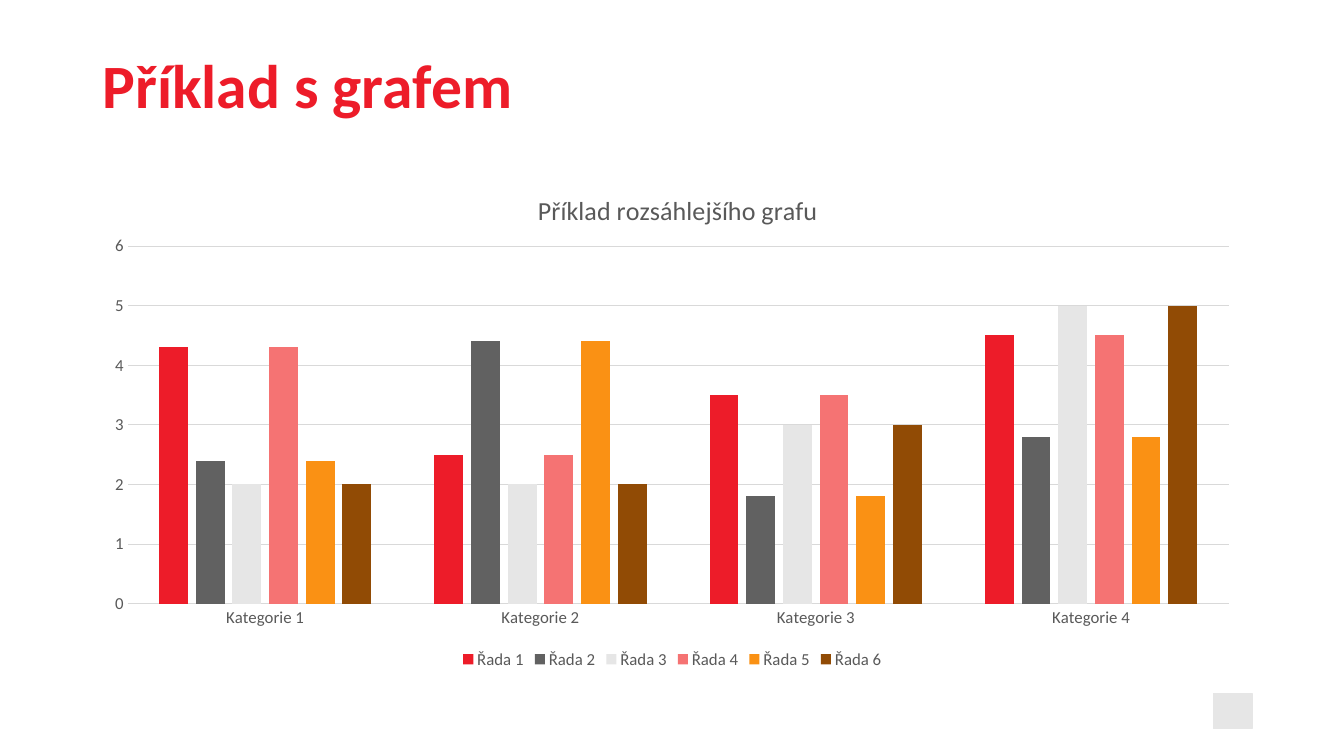
from lxml import etree
from pptx import Presentation
from pptx.chart.data import CategoryChartData
from pptx.dml.color import RGBColor
from pptx.enum.chart import XL_CHART_TYPE as ChartType, XL_LEGEND_POSITION as LegendPosition
from pptx.enum.chart import XL_TICK_MARK as TickMark
from pptx.enum.shapes import MSO_SHAPE as Shape
from pptx.enum.text import MSO_ANCHOR as Anchor
from pptx.oxml.ns import qn
from pptx.util import Pt

RED = RGBColor(0xED, 0x1C, 0x29)
DARK_GREY = RGBColor(0x61, 0x61, 0x61)
LIGHT_GREY = RGBColor(0xE6, 0xE6, 0xE6)
PINK = RGBColor(0xF5, 0x73, 0x73)
ORANGE = RGBColor(0xFA, 0x91, 0x14)
BROWN = RGBColor(0x91, 0x4B, 0x05)
TEXT_GREY = RGBColor(0x59, 0x59, 0x59)
GRID_GREY = RGBColor(0xD9, 0xD9, 0xD9)
FONT = "Calibri"

HEADING = "Příklad s grafem"
CHART_TITLE = "Příklad rozsáhlejšího grafu"
CATEGORIES = ["Kategorie 1", "Kategorie 2", "Kategorie 3", "Kategorie 4"]
SERIES = [
    ("Řada 1", (4.3, 2.5, 3.5, 4.5), RED),
    ("Řada 2", (2.4, 4.4, 1.8, 2.8), DARK_GREY),
    ("Řada 3", (2, 2, 3, 5), LIGHT_GREY),
    ("Řada 4", (4.3, 2.5, 3.5, 4.5), PINK),
    ("Řada 5", (2.4, 4.4, 1.8, 2.8), ORANGE),
    ("Řada 6", (2, 2, 3, 5), BROWN),
]
HEADING_FONT = {"name": FONT, "size": Pt(44), "bold": True}
TITLE_FONT = {"name": FONT, "size": Pt(18.6), "bold": False}
LABEL_FONT = {"name": FONT, "size": Pt(12), "bold": False}

# Left, top, width, height in points
HEADING_BOX = (66.24, 26.64, 828, 72.72)
CHART_BOX = (66.24, 115.92, 828, 365.04)
NUMBER_BOX = (866.88, 495.36, 27.36, 25.2)
# Fractions of the chart area
TITLE_LAYOUT = {"xMode": "edge", "yMode": "edge", "x": 0.38, "y": 0.05}
PLOT_LAYOUT = {"layoutTarget": "inner", "xMode": "edge", "yMode": "edge",
               "x": 0.03, "y": 0.164, "w": 0.95, "h": 0.7}


def points(box):
    return [Pt(length) for length in box]


def set_font(font, formats, color):
    for attribute, value in formats.items():
        setattr(font, attribute, value)
    font.color.rgb = color


def set_line(line, color, width):
    line.color.rgb = color
    line.width = Pt(width)


def set_layout(parent, layout, index):
    """Place a chart part by hand, with its layout element at the given index."""
    for previous in parent.findall(qn("c:layout")):
        parent.remove(previous)
    element = etree.Element(qn("c:layout"))
    manual = etree.SubElement(element, qn("c:manualLayout"))
    for tag, value in layout.items():
        etree.SubElement(manual, qn(f"c:{tag}")).set("val", str(value))
    parent.insert(index, element)


def add_heading(slide):
    frame = slide.shapes.add_textbox(*points(HEADING_BOX)).text_frame
    frame.word_wrap = True
    frame.vertical_anchor = Anchor.MIDDLE
    paragraph = frame.paragraphs[0]
    paragraph.text = HEADING
    paragraph.line_spacing = 0.9
    set_font(paragraph.runs[0].font, HEADING_FONT, RED)


def add_number_square(slide):
    square = slide.shapes.add_shape(Shape.RECTANGLE, *points(NUMBER_BOX))
    square.shadow.inherit = False
    square.fill.solid()
    square.fill.fore_color.rgb = LIGHT_GREY
    set_line(square.line, LIGHT_GREY, 1)


def add_column_chart(slide):
    data = CategoryChartData()
    data.categories = CATEGORIES
    for name, values, _ in SERIES:
        data.add_series(name, values)
    chart = slide.shapes.add_chart(
        ChartType.COLUMN_CLUSTERED, *points(CHART_BOX), data).chart
    set_font(chart.font, LABEL_FONT, TEXT_GREY)

    title = chart.chart_title
    title.text_frame.text = CHART_TITLE
    set_font(title.text_frame.paragraphs[0].runs[0].font, TITLE_FONT, TEXT_GREY)
    title.include_in_layout = False
    title_element = chart.element.find(".//" + qn("c:title"))
    set_layout(title_element, TITLE_LAYOUT, 1)
    set_layout(chart.element.find(".//" + qn("c:plotArea")), PLOT_LAYOUT, 0)

    chart.has_legend = True
    chart.legend.position = LegendPosition.BOTTOM
    chart.legend.include_in_layout = False
    set_font(chart.legend.font, LABEL_FONT, TEXT_GREY)

    plot = chart.plots[0]
    plot.gap_width = 219
    plot.overlap = -27
    plot.vary_by_categories = False
    for series, (_, _, color) in zip(plot.series, SERIES):
        series.format.fill.solid()
        series.format.fill.fore_color.rgb = color

    for axis in (chart.category_axis, chart.value_axis):
        axis.major_tick_mark = axis.minor_tick_mark = TickMark.NONE
        set_font(axis.tick_labels.font, LABEL_FONT, TEXT_GREY)
    set_line(chart.category_axis.format.line, GRID_GREY, 0.75)
    values_axis = chart.value_axis
    values_axis.minimum_scale, values_axis.maximum_scale, values_axis.major_unit = 0, 6, 1
    values_axis.format.line.fill.background()
    set_line(values_axis.major_gridlines.format.line, GRID_GREY, 0.75)


def main():
    deck = Presentation()
    deck.slide_width, deck.slide_height = Pt(960), Pt(540)
    slide = deck.slides.add_slide(deck.slide_layouts[6])
    add_number_square(slide)
    add_heading(slide)
    add_column_chart(slide)
    deck.save("out.pptx")


if __name__ == "__main__":
    main()
